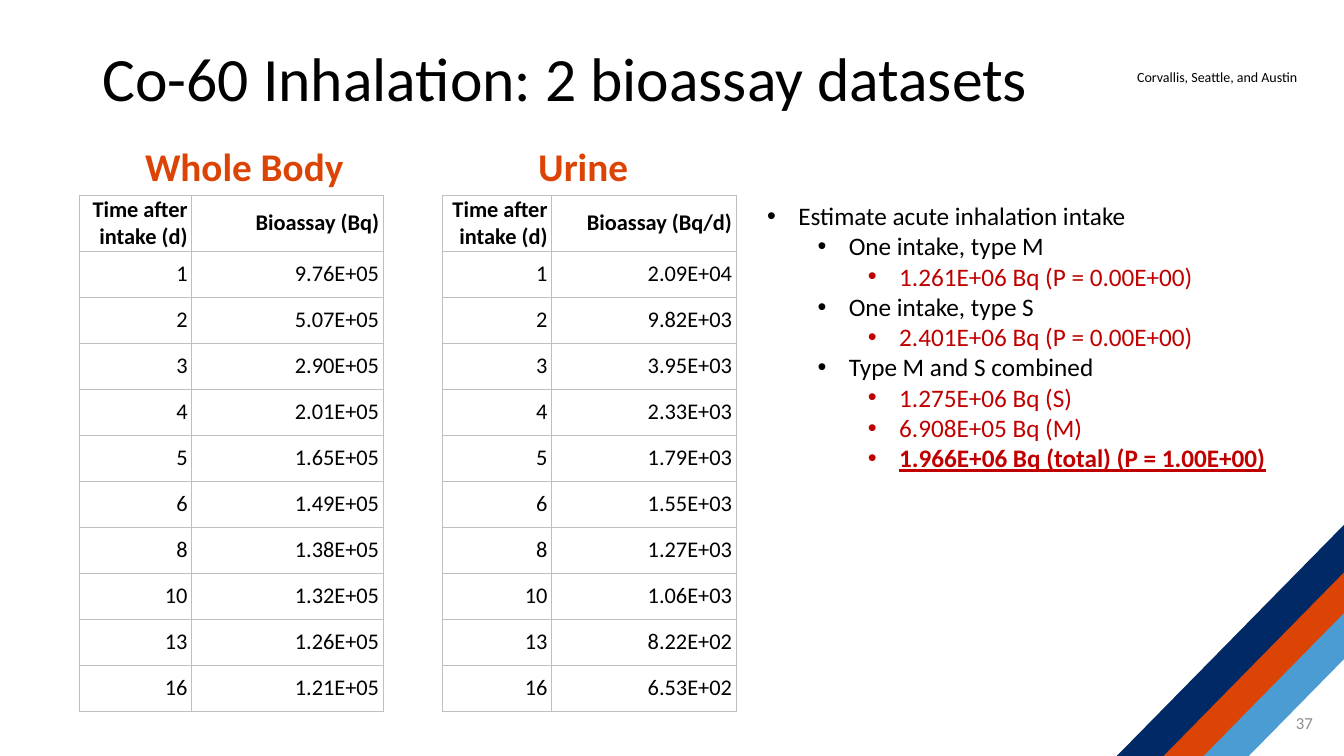
from lxml import etree
from pptx import Presentation
from pptx.dml.color import RGBColor
from pptx.enum import shapes, text
from pptx.oxml import ns
from pptx.util import Inches, Pt

COLORS = {"black": "000000", "navy": "002966", "orange": "DC4405", "sky": "4B9CD3",
          "red": "C00000", "gray": "8C8C8C", "border": "BFBFBF"}
RIGHT = text.PP_ALIGN.RIGHT
MIDDLE = text.MSO_ANCHOR.MIDDLE


def style(para, size, color="black", bold=False):
    para.font.name = "Calibri"
    para.font.size = Pt(size)
    para.font.bold = bold
    para.font.color.rgb = RGBColor.from_string(COLORS[color])


def add_text(page, place, words, size, color="black", bold=False, wrap=True):
    box = page.shapes.add_textbox(*[Inches(length) for length in place])
    box.text_frame.word_wrap = wrap
    box.text_frame.vertical_anchor = MIDDLE
    para = box.text_frame.paragraphs[0]
    para.text = words
    style(para, size, color, bold)
    return para


deck = Presentation()
deck.slide_width, deck.slide_height = Inches(13.33), Inches(7.5)
page = deck.slides.add_slide(deck.slide_layouts[6])

# Corner stripes
for color, left, top, width in [("sky", 11.66, 6.75, 2.14), ("orange", 11.12, 6.48, 2.85),
                                ("navy", 10.65, 6.3, 3.35)]:
    stripe = page.shapes.add_shape(shapes.MSO_SHAPE.RECTANGLE, Inches(left), Inches(top),
                                   Inches(width), Inches(0.33))
    stripe.rotation = 314.5
    stripe.shadow.inherit = False
    stripe.fill.solid()
    stripe.fill.fore_color.rgb = RGBColor.from_string(COLORS[color])
    stripe.line.fill.background()

# Title, places and page number
add_text(page, (11.18, 0.63, 1.82, 0.27), "Corvallis, Seattle, and Austin", 10, wrap=False)
title = add_text(page, (0.92, 0.26, 11.5, 1.1), "Co-60 Inhalation: 2 bioassay datasets", 44)
title.line_spacing = 0.9
add_text(page, (10.12, 6.97, 3, 0.4), "37", 12, "gray").alignment = RIGHT

# Bioassay tables with their headings
days = [1, 2, 3, 4, 5, 6, 8, 10, 13, 16]
whole_body = ["9.76E+05", "5.07E+05", "2.90E+05", "2.01E+05", "1.65E+05",
              "1.49E+05", "1.38E+05", "1.32E+05", "1.26E+05", "1.21E+05"]
urine = ["2.09E+04", "9.82E+03", "3.95E+03", "2.33E+03", "1.79E+03",
         "1.55E+03", "1.27E+03", "1.06E+03", "8.22E+02", "6.53E+02"]
datasets = [("Whole Body", 1.34, "Bioassay (Bq)", whole_body, 0.79, (1.11, 1.9)),
            ("Urine", 5.24, "Bioassay (Bq/d)", urine, 4.39, (1.08, 1.83))]
table_height, header_height = 5.12, 0.55
row_height = (table_height - header_height) / len(days)

for heading, heading_left, unit, values, left, widths in datasets:
    add_text(page, (heading_left, 1.37, 2.3, 0.56), heading, 28, "orange", True)
    rows = [("Time after intake (d)", unit), *zip(days, values)]
    table = page.shapes.add_table(len(rows), 2, Inches(left), Inches(1.94),
                                  Inches(sum(widths)), Inches(table_height)).table
    table.first_row = table.horz_banding = False
    for column, width in zip(table.columns, widths):
        column.width = Inches(width)
    for r, row in enumerate(rows):
        table.rows[r].height = Inches(row_height if r else header_height)
        for c, entry in enumerate(row):
            cell = table.cell(r, c)
            cell.margin_left = cell.margin_right = Inches(0.04)
            cell.margin_top = cell.margin_bottom = 0
            cell.vertical_anchor = MIDDLE
            para = cell.text_frame.paragraphs[0]
            para.text = str(entry)
            para.alignment = RIGHT
            style(para, 16, bold=r == 0)
            # Borders come before the fill in the cell properties
            props = cell._tc.get_or_add_tcPr()
            for side in ("a:lnL", "a:lnR", "a:lnT", "a:lnB"):
                line = etree.SubElement(props, ns.qn(side), w=str(Pt(0.75)))
                paint = etree.SubElement(line, ns.qn("a:solidFill"))
                etree.SubElement(paint, ns.qn("a:srgbClr"), val=COLORS["border"])
            cell.fill.background()

# Intake estimates
estimates = [(0, "Estimate acute inhalation intake"),
             (1, "One intake, type M"),
             (2, "1.261E+06 Bq (P = 0.00E+00)"),
             (1, "One intake, type S"),
             (2, "2.401E+06 Bq (P = 0.00E+00)"),
             (1, "Type M and S combined"),
             (2, "1.275E+06 Bq (S)"),
             (2, "6.908E+05 Bq (M)"),
             (2, "1.966E+06 Bq (total) (P = 1.00E+00)")]
box = page.shapes.add_textbox(Inches(7.51), Inches(1.94), Inches(5.22), Inches(3.43))
frame = box.text_frame
frame.word_wrap = True
for i, (level, words) in enumerate(estimates):
    para = frame.paragraphs[0] if i == 0 else frame.add_paragraph()
    para.text = words
    para.level = level
    props = para._p.get_or_add_pPr()
    props.set("marL", str(Inches(0.31 + 0.5 * level)))
    props.set("indent", str(Inches(-0.31)))
    etree.SubElement(props, ns.qn("a:buFont"), typeface="Arial")
    etree.SubElement(props, ns.qn("a:buChar"), char="•")
    total = "total" in words
    style(para, 18, "red" if level == 2 else "black", total)
    para.font.underline = total

deck.save("out.pptx")
